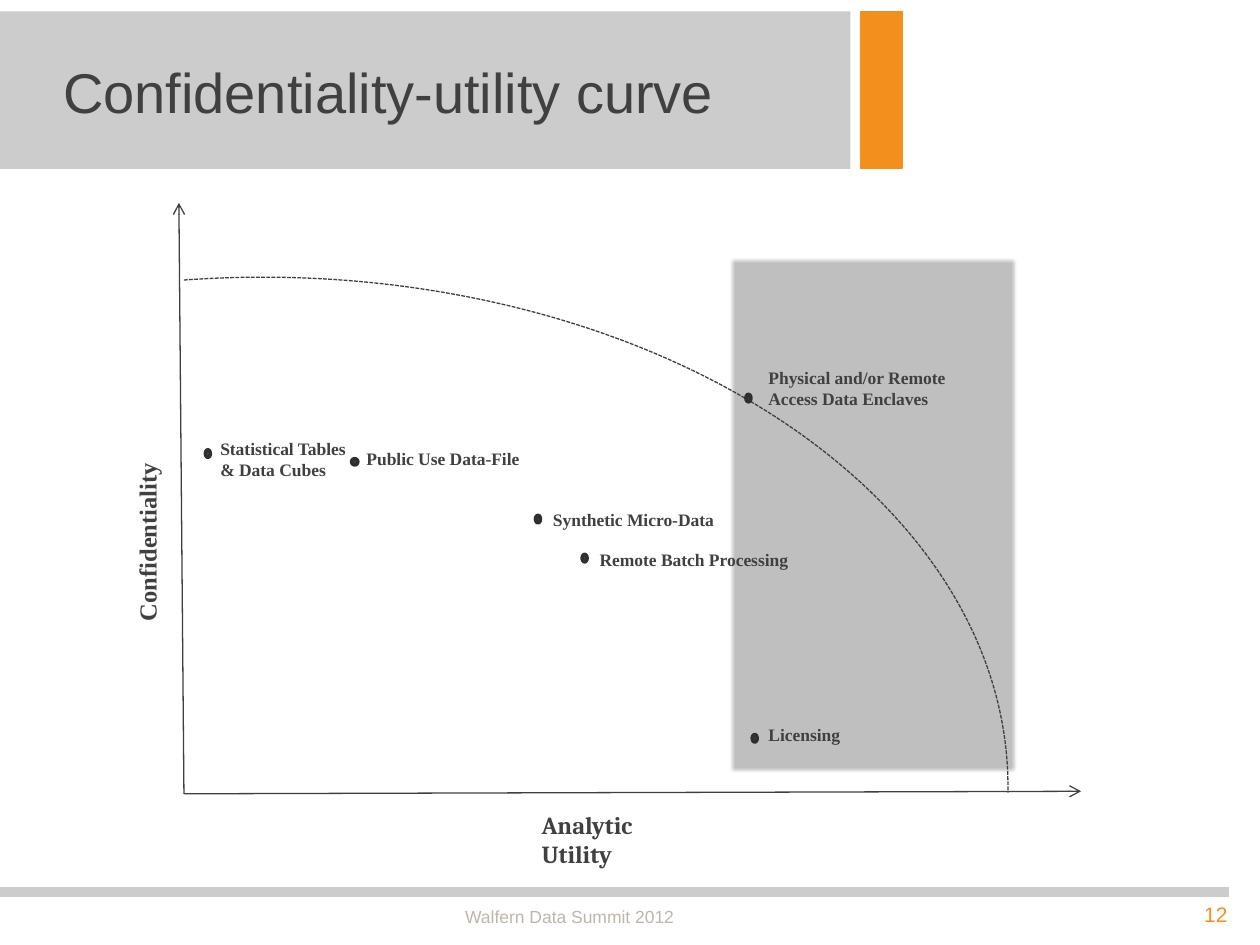
from lxml import etree
from pptx import Presentation
from pptx.dml.color import RGBColor
from pptx.enum.dml import MSO_LINE_DASH_STYLE as Dash
from pptx.enum.shapes import MSO_CONNECTOR, MSO_SHAPE
from pptx.enum.text import MSO_ANCHOR, PP_ALIGN
from pptx.oxml.ns import qn
from pptx.util import Inches, Pt

COLORS = {
    "band": "CCCCCC",
    "accent": "F3901D",
    "zone": "BFBFBF",
    "text": "404040",
    "axis": "3F3F3F",
    "dot_edge": "2F2F2F",
    "footer": "BEB5AB",
}
SERIF = "Times New Roman"
DOTS = [
    (5.92, 3.13, 0.04, 0.06),
    (5.97, 5.83, 0.04, 0.06),
    (1.63, 3.57, 0.04, 0.06),
    (2.79, 3.64, 0.05, 0.05),
    (4.62, 4.4, 0.04, 0.06),
    (4.25, 4.09, 0.04, 0.06),
]
METHODS = [
    ("Physical and/or Remote Access Data Enclaves", (6, 2.86, 1.95, 0.44)),
    ("Remote Batch Processing", (4.66, 4.31, 1.92, 0.27)),
    ("Public Use Data-File", (2.81, 3.51, 1.46, 0.27)),
    ("Licensing", (6, 5.7, 1.78, 0.27)),
    ("Statistical Tables & Data Cubes", (1.65, 3.43, 1.26, 0.44)),
    ("Synthetic Micro-Data", (4.29, 3.99, 1.71, 0.27)),
]


def rgb(name):
    """Return the named palette colour."""
    return RGBColor.from_string(COLORS[name])


def style_text(frame, text, size, font, color="text", bold=False, align=PP_ALIGN.LEFT):
    """Write one formatted paragraph into a text frame."""
    frame.text = text
    frame.word_wrap = True
    paragraph = frame.paragraphs[0]
    paragraph.alignment = align
    run_font = paragraph.runs[0].font
    run_font.size, run_font.name, run_font.bold = Pt(size), font, bold
    run_font.color.rgb = rgb(color)
    return paragraph


def add_label(slide, text, box, size, font, **style):
    """Add a text box and return its frame."""
    frame = slide.shapes.add_textbox(*map(Inches, box)).text_frame
    style_text(frame, text, size, font, **style)
    return frame


def add_filled(slide, preset, box, fill, edge=None, width=0.75):
    """Add a filled preset shape, outlined when an edge colour is given."""
    shape = slide.shapes.add_shape(preset, *map(Inches, box))
    shape.shadow.inherit = False
    shape.fill.solid()
    shape.fill.fore_color.rgb = rgb(fill)
    if edge:
        shape.line.color.rgb = rgb(edge)
        shape.line.width = Pt(width)
    else:
        shape.line.fill.background()
    return shape


def add_line(slide, start, end, color, width, arrow=False):
    """Add a straight line, optionally with an open arrowhead at its end."""
    line = slide.shapes.add_connector(
        MSO_CONNECTOR.STRAIGHT, *map(Inches, (*start, *end))
    )
    line.line.color.rgb = rgb(color)
    line.line.width = Pt(width)
    if arrow:
        etree.SubElement(line.line._get_or_add_ln(), qn("a:tailEnd"), type="arrow")
    etree.SubElement(line._element.spPr, qn("a:effectLst"))


def add_title(slide, text):
    """Format the title placeholder as the grey heading band."""
    title = slide.shapes.title
    title.left, title.top, title.width, title.height = map(Inches, (0, 0.09, 6.75, 1.25))
    title.fill.solid()
    title.fill.fore_color.rgb = rgb("band")
    frame = title.text_frame
    style_text(frame, text, 32, "Arial").line_spacing = Pt(36)
    frame.vertical_anchor = MSO_ANCHOR.MIDDLE
    frame.margin_left, frame.margin_top = Inches(0.5), Inches(0.1)


def add_zone(slide):
    """Add the soft-edged high-utility zone."""
    zone = add_filled(slide, MSO_SHAPE.RECTANGLE, (5.77, 2.03, 2.31, 4.12), "zone")
    effects = zone._element.spPr.find(qn("a:effectLst"))
    etree.SubElement(effects, qn("a:softEdge"), rad=str(Pt(2.5)))


def add_axes(slide):
    """Add both axes with their captions."""
    origin = (1.46, 6.3)
    for tip in ((1.42, 1.61), (8.58, 6.28)):
        add_line(slide, origin, tip, "axis", 0.75, arrow=True)
    add_label(slide, "Analytic Utility", (4.2, 6.38, 1.16, 0.56), 14, "Cambria", bold=True)
    caption = add_label(slide, "Confidentiality", (1, 3.5, 0.44, 1.53), 14, SERIF, bold=True)
    caption._txBody.bodyPr.set("vert", "vert270")


def add_curve(slide):
    """Add the dashed confidentiality-utility frontier."""
    curve = slide.shapes.add_shape(
        MSO_SHAPE.ARC, *map(Inches, (-3.83, 2.2, 11.83, 8.08))
    )
    curve.adjustments[0], curve.adjustments[1] = 156.69, 0.29
    curve.shadow.inherit = False
    curve.fill.background()
    curve.line.color.rgb = rgb("axis")
    curve.line.width = Pt(0.75)
    curve.line.dash_style = Dash.SQUARE_DOT


def add_footer(slide):
    """Add the bottom rule, event name and slide number."""
    add_line(slide, (0, 7.08), (9.75, 7.08), "band", 6)
    add_label(slide, "12", (7.92, 7.11, 1.92, 0.3), 12, "Arial",
              color="accent", align=PP_ALIGN.RIGHT)
    event = add_label(slide, "Walfern Data Summit 2012", (0.5, 7.19, 8.04, 0.3), 10,
                      "Arial", color="footer", align=PP_ALIGN.CENTER)
    event.margin_top = 0


def main():
    """Build and save the slide."""
    deck = Presentation()
    deck.slide_width, deck.slide_height = Inches(10), Inches(7.5)
    slide = deck.slides.add_slide(deck.slide_layouts[5])
    add_title(slide, "Confidentiality-utility curve")
    add_filled(slide, MSO_SHAPE.RECTANGLE, (6.83, 0.09, 0.33, 1.25), "accent", "accent")
    add_zone(slide)
    add_axes(slide)
    add_curve(slide)
    for box in DOTS:
        add_filled(slide, MSO_SHAPE.OVAL, box, "text", "dot_edge", 2)
    for method, box in METHODS:
        add_label(slide, method, box, 10, SERIF, bold=True)
    add_footer(slide)
    deck.save("out.pptx")


if __name__ == "__main__":
    main()
